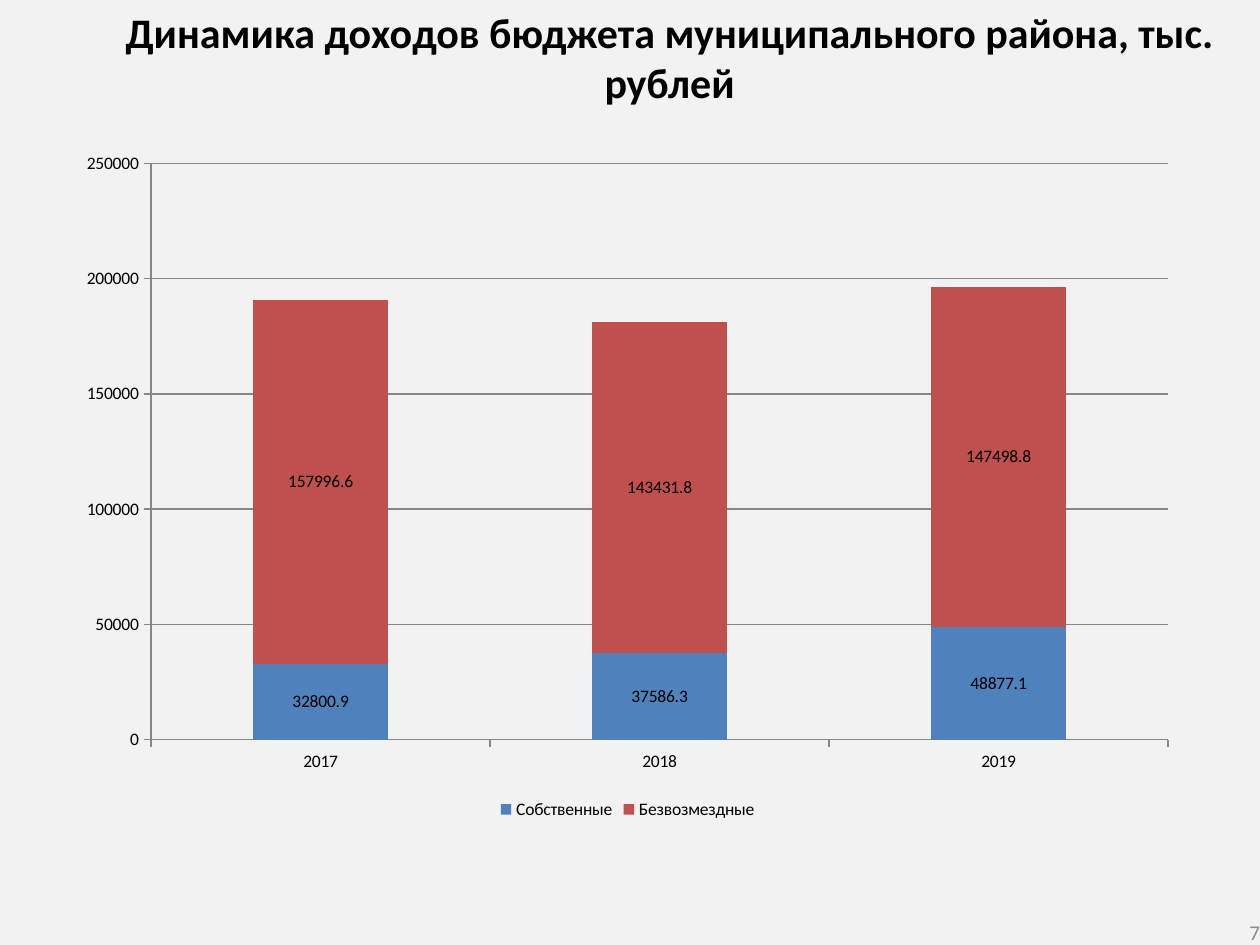
from pptx import Presentation
from pptx.chart.data import CategoryChartData
from pptx.dml.color import RGBColor
from pptx.enum.chart import XL_CHART_TYPE, XL_LABEL_POSITION, XL_LEGEND_POSITION, XL_TICK_MARK
from pptx.enum.text import MSO_ANCHOR, MSO_AUTO_SIZE, PP_ALIGN
from pptx.util import Pt

FONT = "Calibri"
BLACK = "000000"
GRAY = "868686"


def color(code):
    return RGBColor.from_string(code)


def write(box, text, size, code=BLACK, bold=False, align=PP_ALIGN.LEFT,
          anchor=MSO_ANCHOR.TOP, insets=(7.2, 3.6)):
    frame = box.text_frame
    frame.word_wrap = True
    frame.auto_size = MSO_AUTO_SIZE.NONE
    frame.vertical_anchor = anchor
    frame.margin_left = frame.margin_right = Pt(insets[0])
    frame.margin_top = frame.margin_bottom = Pt(insets[1])
    para = frame.paragraphs[0]
    para.alignment = align
    span = para.add_run()
    span.text = text
    span.font.name = FONT
    span.font.size = Pt(size)
    span.font.bold = bold
    span.font.color.rgb = color(code)


deck = Presentation()
deck.slide_width, deck.slide_height = Pt(720), Pt(540)
page = deck.slides.add_slide(deck.slide_layouts[5])
page.background.fill.solid()
page.background.fill.fore_color.rgb = color("F2F2F2")

# Title
title = page.shapes.title
title.left, title.top, title.width, title.height = Pt(62.64), Pt(0), Pt(640), Pt(67)
write(title, "Динамика доходов бюджета муниципального района, тыс. рублей", 24,
      bold=True, align=PP_ALIGN.CENTER)

# Page number
number = page.shapes.add_textbox(Pt(552), Pt(525), Pt(168), Pt(15))
write(number, "7", 12, code="8C8C8C", align=PP_ALIGN.RIGHT,
      anchor=MSO_ANCHOR.MIDDLE, insets=(0, 0))

# Revenue chart
revenue = [
    ("Собственные", (32800.9, 37586.3, 48877.1), "4F81BD"),
    ("Безвозмездные", (157996.6, 143431.8, 147498.8), "C0504D"),
]
data = CategoryChartData()
data.categories = ["2017", "2018", "2019"]
for name, values, _ in revenue:
    data.add_series(name, values)
chart = page.shapes.add_chart(XL_CHART_TYPE.COLUMN_STACKED, Pt(36.7), Pt(80),
                              Pt(643.7), Pt(391), data).chart
chart.has_title = False
chart.font.name = FONT
chart.font.size = Pt(10)
chart.font.color.rgb = color(BLACK)

# Columns and value labels
plot = chart.plots[0]
plot.gap_width = 150
plot.overlap = 100
plot.vary_by_categories = False
for series, (_, _, code) in zip(plot.series, revenue):
    series.format.fill.solid()
    series.format.fill.fore_color.rgb = color(code)
    labels = series.data_labels
    labels.show_value = True
    labels.position = XL_LABEL_POSITION.CENTER

# Axes and gridlines
chart.value_axis.has_major_gridlines = True
chart.value_axis.minimum_scale = 0
chart.value_axis.maximum_scale = 250000
chart.value_axis.major_unit = 50000
for axis in (chart.category_axis, chart.value_axis):
    axis.major_tick_mark = XL_TICK_MARK.OUTSIDE
    axis.minor_tick_mark = XL_TICK_MARK.NONE
for part in (chart.category_axis, chart.value_axis, chart.value_axis.major_gridlines):
    part.format.line.color.rgb = color(GRAY)
    part.format.line.width = Pt(0.75)

# Legend
chart.has_legend = True
chart.legend.position = XL_LEGEND_POSITION.BOTTOM
chart.legend.include_in_layout = False

deck.save("out.pptx")
